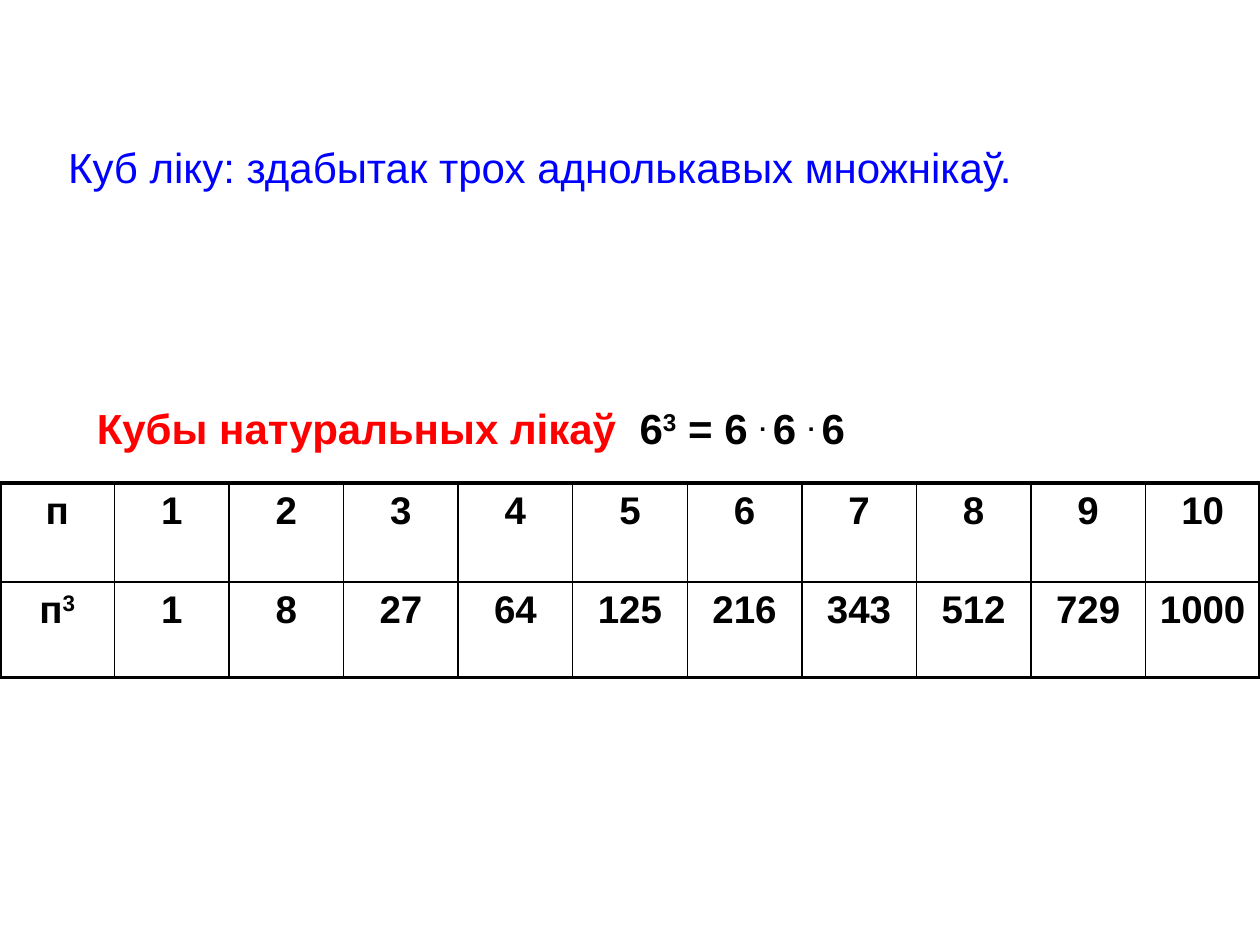
import pptx
import pptx.dml.color
import pptx.enum.text
import pptx.oxml.ns
import pptx.util
import lxml.etree

THEME = {
    "font": "Arial",
    "text": 24, "cell": 22,
    "black": "000000", "blue": "0000FF", "red": "FF0000",
    "thin": 1, "thick": 2.25,
}
WIDE, HIGH = pptx.util.Inches(10), pptx.util.Inches(7.5)


def write(par, parts, size, bold):
    """Fill a paragraph from (text, colour name, raised) parts."""
    for text, color, raised in parts:
        run = par.add_run()
        run.text = text
        font = run.font
        font.name, font.size, font.bold = THEME["font"], pptx.util.Pt(size), bold
        font.color.rgb = pptx.dml.color.RGBColor.from_string(THEME[color])
        if raised:
            font._element.set("baseline", "30000")


def edge(cell, side, width):
    """Draw one cell border; side is L, R, T or B."""
    tag = pptx.oxml.ns.qn
    line = lxml.etree.Element(tag(f"a:ln{side}"), w=str(pptx.util.Pt(width)))
    fill = lxml.etree.SubElement(line, tag("a:solidFill"))
    lxml.etree.SubElement(fill, tag("a:srgbClr"), val=THEME["black"])
    props = cell._tc.get_or_add_tcPr()
    props.insert("LRTB".index(side), line)


deck = pptx.Presentation()
deck.slide_width, deck.slide_height = WIDE, HIGH
slide = deck.slides.add_slide(deck.slide_layouts[6])

# Definition and table title: left, top, width, height as shares of the slide
texts = [
    ((0.035, 0.143, 0.874, 0.229), False,
     [(" Куб ліку: здабытак трох аднолькавых множнікаў.", "blue", False)]),
    ((0.067, 0.419, 0.827, 0.067), True,
     [("Кубы натуральных лікаў  ", "red", False),
      ("6", "black", False), ("3", "black", True),
      (" = 6 ", "black", False), (". ", "black", True),
      ("6 ", "black", False), (". ", "black", True),
      ("6", "black", False)]),
]
for (left, top, width, height), bold, parts in texts:
    box = slide.shapes.add_textbox(
        int(left * WIDE), int(top * HIGH), int(width * WIDE), int(height * HIGH))
    box.text_frame.word_wrap = True
    write(box.text_frame.paragraphs[0], parts, THEME["text"], bold)

# Table of cubes
nums = range(1, 11)
rows = [
    [[("п", "black", False)]] + [[(str(n), "black", False)] for n in nums],
    [[("п", "black", False), ("3", "black", True)]]
    + [[(str(n ** 3), "black", False)] for n in nums],
]
cols = len(rows[0])
table = slide.shapes.add_table(
    len(rows), cols, 0, int(0.511 * HIGH), WIDE, int(0.207 * HIGH)).table
table.first_row = table.horz_banding = False
for row, share in zip(table.rows, (0.105, 0.101)):
    row.height = int(share * HIGH)

for r, row in enumerate(rows):
    for c, parts in enumerate(row):
        cell = table.cell(r, c)
        cell.fill.background()
        par = cell.text_frame.paragraphs[0]
        par.alignment = pptx.enum.text.PP_ALIGN.CENTER
        write(par, parts, THEME["cell"], True)
        outer = {"L": c == 0, "R": c == cols - 1,
                 "T": r == 0, "B": r == len(rows) - 1}
        for side, thick in outer.items():
            edge(cell, side, THEME["thick" if thick else "thin"])

deck.save("out.pptx")
